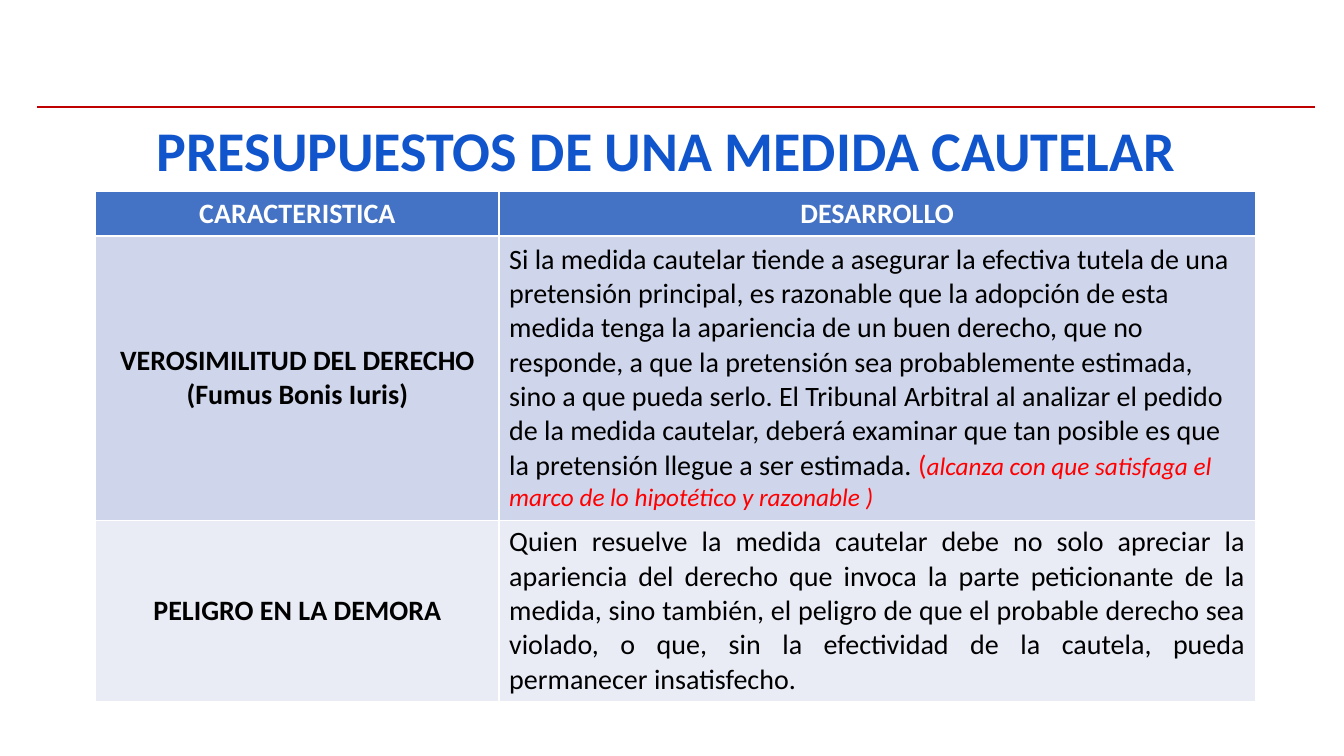
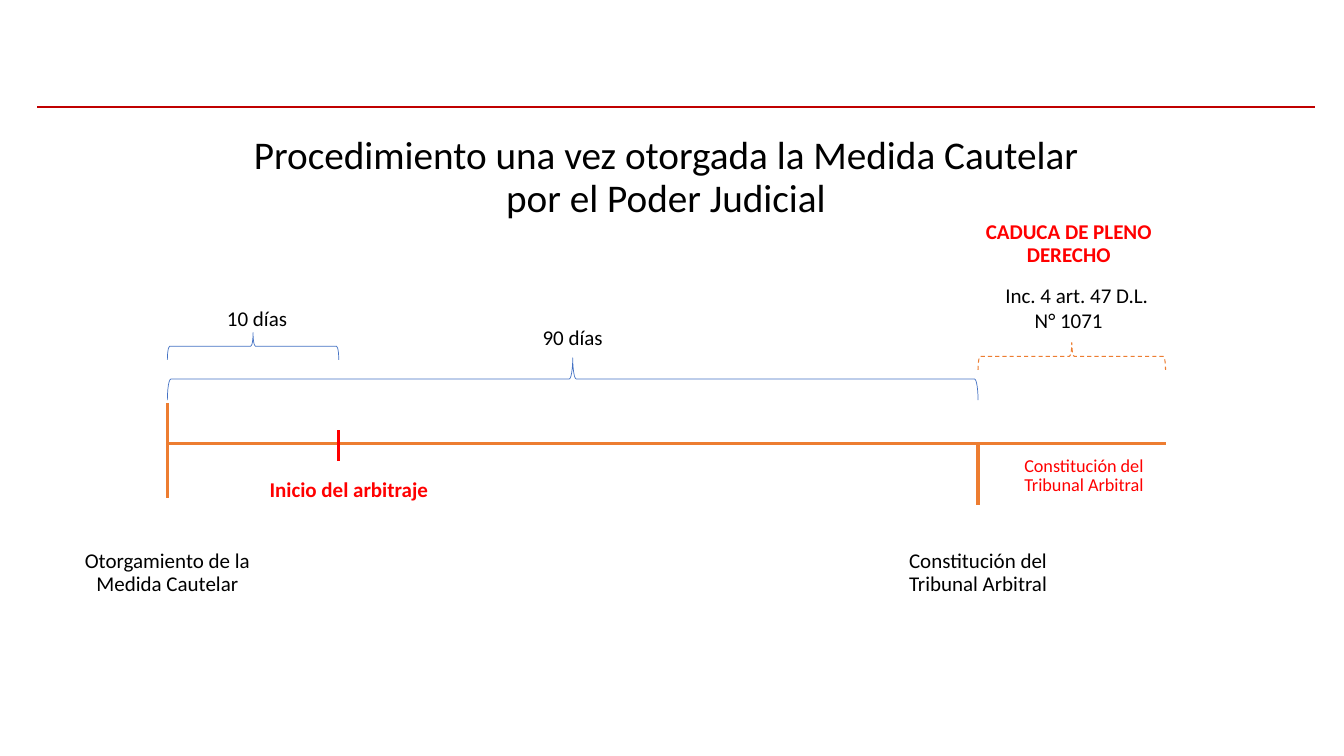
from dataclasses import dataclass

from lxml import etree
from pptx import Presentation
from pptx import util as u
from pptx.dml.color import RGBColor
from pptx.enum import dml, shapes, text
from pptx.oxml.ns import qn

FONT = "Calibri"
BLACK = RGBColor(0x00, 0x00, 0x00)
WHITE = RGBColor(0xFF, 0xFF, 0xFF)
RED = RGBColor(0xFF, 0x00, 0x00)
DARK_RED = RGBColor(0xC0, 0x00, 0x00)
TITLE_BLUE = RGBColor(0x11, 0x55, 0xCC)
BLUE = RGBColor(0x44, 0x72, 0xC4)
ORANGE = RGBColor(0xED, 0x7D, 0x31)
ROW_FILLS = (RGBColor(0xCF, 0xD5, 0xEA), RGBColor(0xE9, 0xEB, 0xF5))

CENTER = text.PP_ALIGN.CENTER
LEFT = text.PP_ALIGN.LEFT
JUSTIFY = text.PP_ALIGN.JUSTIFY
TITLE_ONLY = 5

HEADERS = ("CARACTERISTICA", "DESARROLLO")
VEROSIMILITUD = (
    "Si la medida cautelar tiende a asegurar la efectiva tutela de una pretensión principal, "
    "es razonable que la adopción de esta medida tenga la apariencia de un buen derecho, que no "
    "responde, a que la pretensión sea probablemente estimada, sino a que pueda serlo. El Tribunal "
    "Arbitral al analizar el pedido de la medida cautelar, deberá examinar que tan posible es que "
    "la pretensión llegue a ser estimada. ")
ALCANCE = "alcanza con que satisfaga el marco de lo hipotético y razonable )"
PELIGRO = (
    "Quien resuelve la medida cautelar debe no solo apreciar la apariencia del derecho que invoca "
    "la parte peticionante de la medida, sino también, el peligro de que el probable derecho sea "
    "violado, o que, sin la efectividad de la cautela, pueda permanecer insatisfecho.")


@dataclass
class Grid:
    """A box in inches, divided into equal columns and rows."""
    left: float
    top: float
    width: float
    height: float
    columns: int = 1
    rows: int = 1

    def across(self, columns):
        """Return the length of a number of columns."""
        return u.Inches(self.width * columns / self.columns)

    def down(self, rows):
        """Return the length of a number of rows."""
        return u.Inches(self.height * rows / self.rows)

    def point(self, column, row):
        """Return the slide position of a grid point."""
        return u.Inches(self.left) + self.across(column), u.Inches(self.top) + self.down(row)

    def frame(self):
        """Return the left, top, width and height of the whole box."""
        return (*self.point(0, 0), self.across(self.columns), self.down(self.rows))


PAGE = Grid(0, 0, 13.33, 7.5)
RULE = Grid(0.37, 1.06, 12.67, 1)
TIMELINE = Grid(1.66, 2.15, 9.9, 5, columns=99, rows=50)


def style(font, size, color=BLACK, bold=False, italic=False):
    """Set the font of a paragraph or a run."""
    font.name, font.size = FONT, u.Pt(size)
    font.bold, font.italic = bold, italic
    font.color.rgb = color


def write(para, words, size, color=BLACK, bold=False, align=CENTER, spacing=0.9):
    """Fill one paragraph with text of one style."""
    para.text, para.alignment, para.line_spacing = words, align, spacing
    style(para.font, size, color, bold)


def add_line(page, grid, start, end, color, weight):
    """Draw a straight line between two grid points."""
    line = page.shapes.add_connector(
        shapes.MSO_CONNECTOR.STRAIGHT, *grid.point(*start), *grid.point(*end))
    line.line.color.rgb, line.line.width = color, u.Pt(weight)
    etree.SubElement(line._element.spPr, qn("a:effectLst"))


def add_page(deck, box, heading, size, color=BLACK, bold=False, anchor=text.MSO_ANCHOR.TOP):
    """Add a slide with the shared rule and a heading in the given box."""
    page = deck.slides.add_slide(deck.slide_layouts[TITLE_ONLY])
    title = page.shapes.title
    title.left, title.top, title.width, title.height = box.frame()
    frame = title.text_frame
    frame.auto_size, frame.vertical_anchor = text.MSO_AUTO_SIZE.NONE, anchor
    write(frame.paragraphs[0], heading, size, color, bold)
    add_line(page, RULE, (0, 0), (1, 0), DARK_RED, 1.5)
    return page


def add_requirements(page, box):
    """Place the table of requirements in the given box."""
    table = page.shapes.add_table(3, 2, *box.frame()).table
    for column, share in zip(table.columns, (4, 7.5)):
        column.width = box.across(share)
    for row, share in zip(table.rows, (0.43, 2.82, 1.8)):
        row.height = box.down(share)
    contents = (
        (HEADERS[0], HEADERS[1], CENTER),
        ("VEROSIMILITUD DEL DERECHO\n(Fumus Bonis Iuris)", VEROSIMILITUD, LEFT),
        ("PELIGRO EN LA DEMORA", PELIGRO, JUSTIFY),
    )
    for index, (name, detail, align) in enumerate(contents):
        header = index == 0
        for cell, words, side in zip(table.rows[index].cells, (name, detail), (CENTER, align)):
            cell.fill.solid()
            cell.fill.fore_color.rgb = BLUE if header else ROW_FILLS[index - 1]
            cell.vertical_anchor = text.MSO_ANCHOR.TOP if header else text.MSO_ANCHOR.MIDDLE
            cell.text = words
            for para in cell.text_frame.paragraphs:
                write(para, para.text, 20, WHITE if header else BLACK,
                      header or words == name, side, 1.0)
    para = table.cell(1, 1).text_frame.paragraphs[0]
    for words, size, italic in (("(", 20, False), (ALCANCE, 18, True)):
        span = para.add_run()
        span.text = words
        style(span.font, size, RED, italic=italic)


def add_label(page, grid, center, row, words, size=15, color=BLACK, bold=False):
    """Add a label centred on a column and return its text frame."""
    width = 18.7
    label = page.shapes.add_textbox(
        *grid.point(center - width / 2, row), grid.across(width), grid.down(3.4))
    label.text_frame.word_wrap = True
    write(label.text_frame.paragraphs[0], words, size, color, bold)
    return label.text_frame


def add_brace(page, grid, start, end, row, rows, color, weight, dash=None):
    """Draw a brace that points up, spanning two columns."""
    left, top = grid.point(start, row)
    span, depth = grid.across(end - start), grid.down(rows)
    shift = (span - depth) // 2
    brace = page.shapes.add_shape(
        shapes.MSO_SHAPE.LEFT_BRACE, left + shift, top - shift, depth, span)
    brace.rotation = 90
    brace.shadow.inherit = False
    brace.fill.background()
    brace.line.color.rgb, brace.line.width = color, u.Pt(weight)
    if dash:
        brace.line.dash_style = dash


def add_timeline(page, grid):
    """Place the axis, its marks, braces and labels on the grid."""
    begin, arbitration, tribunal, finish, axis = 0, 17, 80.4, 99, 22.5
    for start, end, color in (
            ((begin, axis), (finish, axis), ORANGE),
            ((begin, 18.5), (begin, 27.9), ORANGE),
            ((tribunal, axis), (tribunal, 28.6), ORANGE),
            ((arbitration, 21.2), (arbitration, 24.2), RED)):
        add_line(page, grid, start, end, color, 2.25)

    add_brace(page, grid, begin, arbitration, 11.5, 2.7, BLUE, 0.5)
    add_brace(page, grid, begin, tribunal, 14, 4.2, BLUE, 0.5)
    add_brace(page, grid, tribunal, finish, 12.5, 2.7, ORANGE, 0.75, dml.MSO_LINE.DASH)

    add_label(page, grid, begin, 32.6, "Otorgamiento de la Medida Cautelar")
    add_label(page, grid, tribunal, 32.6, "Constitución del Tribunal Arbitral")
    add_label(page, grid, 18, 25.6, "Inicio del arbitraje", color=RED, bold=True)
    add_label(page, grid, 8.9, 8.6, "10 días")
    add_label(page, grid, 40.2, 10.5, "90 días")
    add_label(page, grid, 90.9, 23.3, "Constitución del Tribunal Arbitral", 13, RED)
    expiry = add_label(page, grid, 89.4, 0, "CADUCA DE PLENO DERECHO", color=RED, bold=True)
    para = expiry.add_paragraph()
    write(para, "Inc. 4 art. 47 D.L. N° 1071", 15, spacing=1.0)
    para.space_before = u.Pt(11)
    para._p.get_or_add_pPr().set("indent", str(u.Inches(0.16)))


def main():
    """Build and save the deck."""
    deck = Presentation()
    deck.slide_width, deck.slide_height = PAGE.across(1), PAGE.down(1)

    page = add_page(deck, Grid(0.88, 1.19, 11.45, 0.66), "PRESUPUESTOS DE UNA MEDIDA CAUTELAR",
                    40, TITLE_BLUE, True, text.MSO_ANCHOR.MIDDLE)
    add_requirements(page, Grid(0.95, 1.9, 11.5, 5.05, columns=11.5, rows=5.05))

    page = add_page(deck, Grid(2.38, 1.3, 8.45, 0.56),
                    "Procedimiento una vez otorgada la Medida Cautelar por el Poder Judicial", 28)
    add_timeline(page, TIMELINE)
    deck.save("out.pptx")


if __name__ == "__main__":
    main()
